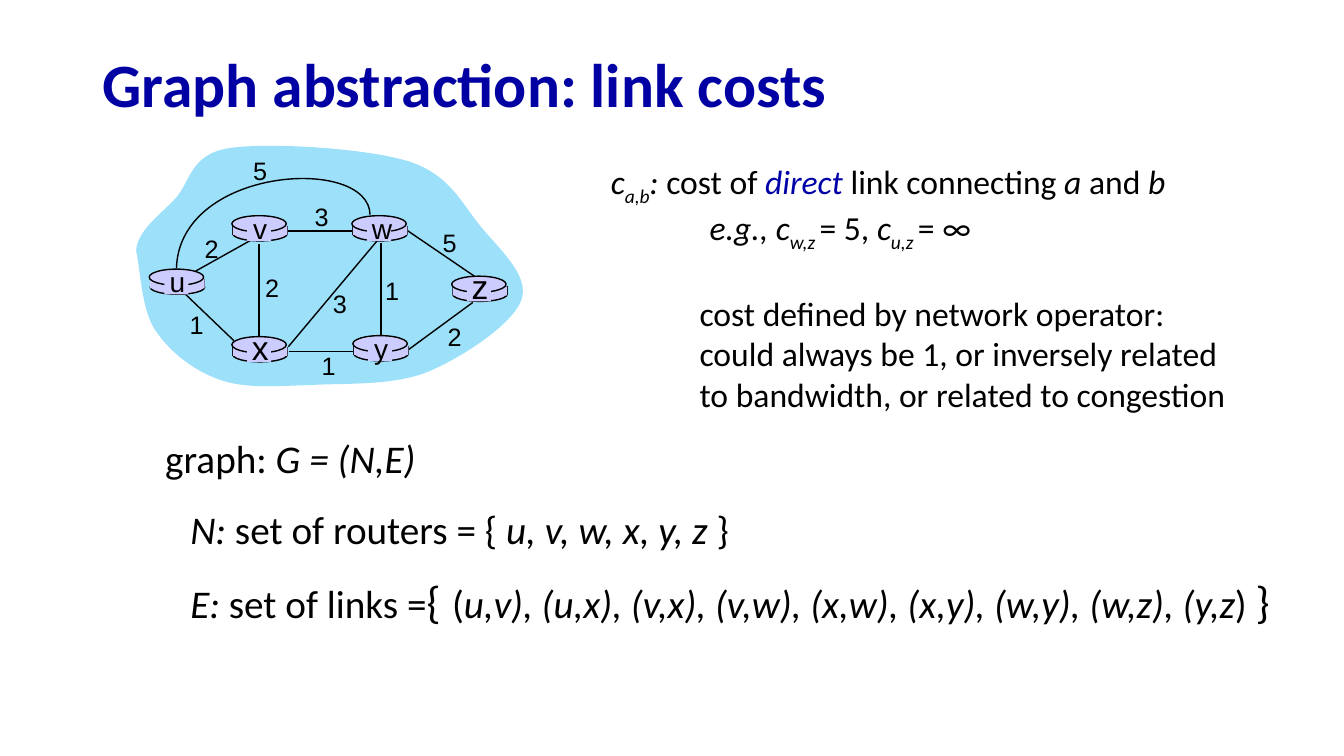
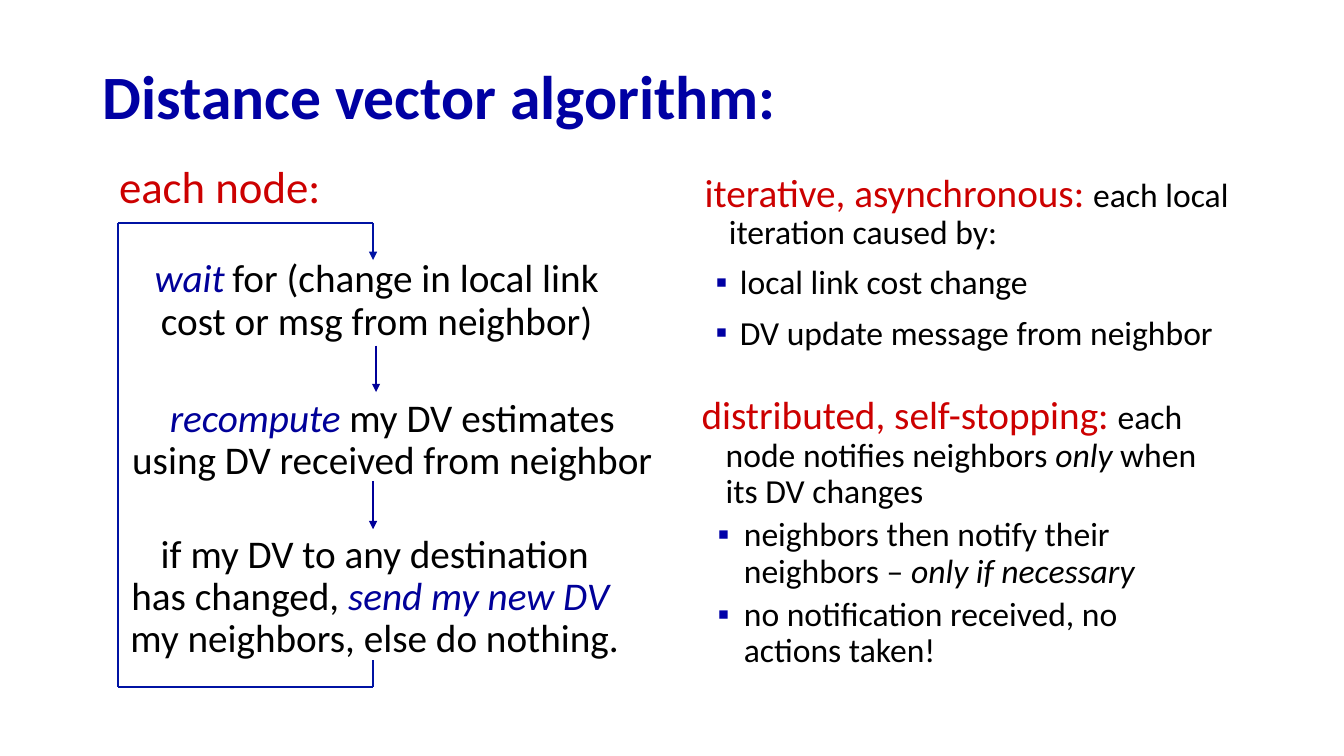
from lxml import etree
from pptx import Presentation
from pptx.dml.color import RGBColor
from pptx.enum.shapes import MSO_CONNECTOR, MSO_SHAPE
from pptx.enum.text import MSO_ANCHOR, PP_ALIGN
from pptx.oxml.ns import qn
from pptx.util import Inches, Pt

STRAIGHT = MSO_CONNECTOR.STRAIGHT
OVAL, RECT = MSO_SHAPE.OVAL, MSO_SHAPE.RECTANGLE
CENTER, MIDDLE = PP_ALIGN.CENTER, MSO_ANCHOR.MIDDLE

BLACK = RGBColor(0x00, 0x00, 0x00)
NAVY = RGBColor(0x00, 0x00, 0xA3)
BLUE = RGBColor(0x00, 0x00, 0x99)
ACCENT = RGBColor(0x00, 0x00, 0xA8)
FRAME = RGBColor(0x00, 0x13, 0xA3)
RED = RGBColor(0xCC, 0x00, 0x00)
SKY = RGBColor(0x9C, 0xE0, 0xFA)
LILAC = RGBColor(0xCC, 0xCC, 0xFF)

IT = {"italic": True}
SUB = {"italic": True, "sub": True}
KEY = {"italic": True, "color": BLUE}
HEAD = {"size": Pt(28), "color": RED}


class Deck:
    def __init__(self):
        self.prs = Presentation()
        self.prs.slide_width, self.prs.slide_height = Inches(13.33), Inches(7.5)
        self.s = None

    def slide(self, title, top, width):
        self.s = self.prs.slides.add_slide(self.prs.slide_layouts[6])
        self.text((0.92, top, width, 0.98), [([(title, {})], {"line_spacing": 0.9})],
                  size=44, anchor=MIDDLE, bold=True, color=NAVY)

    def text(self, box, paras, size=24, anchor=None, inset=0.05, **base):
        """Each paragraph is (runs, format); each run is (text, font format)."""
        tf = self.s.shapes.add_textbox(*map(Inches, box)).text_frame
        tf.word_wrap = True
        tf.margin_top = Inches(inset)
        if anchor is not None:
            tf.vertical_anchor = anchor
        for i, (runs, fmt) in enumerate(paras):
            p = tf.paragraphs[0] if i == 0 else tf.add_paragraph()
            self.format_paragraph(p, **fmt)
            for words, style in runs:
                r = p.add_run()
                r.text = words
                self.format_run(r, {"name": "Calibri", "size": Pt(size),
                                    "color": BLACK, **base, **style})

    def format_paragraph(self, p, left=0, hang=0, bullet=None, **fmt):
        for name, value in fmt.items():
            setattr(p, name, value)
        pPr = p._p.get_or_add_pPr()
        pPr.set("marL", str(Inches(left)))
        pPr.set("indent", str(-Inches(hang)))
        if bullet is not None:
            clr = etree.SubElement(pPr, qn("a:buClr"))
            etree.SubElement(clr, qn("a:srgbClr")).set("val", str(bullet))
            etree.SubElement(pPr, qn("a:buFont")).set("typeface", "Arial")
            etree.SubElement(pPr, qn("a:buChar")).set("char", "▪")

    def format_run(self, r, style):
        for name, value in style.items():
            if name == "color":
                r.font.color.rgb = value
            elif name == "sub":
                r._r.get_or_add_rPr().set("baseline", "-25000")
            else:
                setattr(r.font, name, value)

    def label(self, x, y, w, words, size, **base):
        height = round(0.1 + size / 60, 2)
        self.text((x, y, w, height), [([(words, {})], {"alignment": CENTER})], size, **base)

    def paint(self, sp, fill=None, line=None):
        sp.shadow.inherit = False
        if fill is None:
            sp.fill.background()
        else:
            sp.fill.solid()
            sp.fill.fore_color.rgb = fill
        if line is None:
            sp.line.fill.background()
        else:
            sp.line.color.rgb, sp.line.width = line, Pt(1)

    def shape(self, kind, x, y, w, h, fill, line=None):
        self.paint(self.s.shapes.add_shape(kind, *map(Inches, (x, y, w, h))), fill, line)

    def curve(self, points, close=False, **colours):
        """Draw cubic curves: a start, then two handles and an end for each."""
        pts = [(Inches(x), Inches(y)) for x, y in points]
        fb = self.s.shapes.build_freeform(*pts[0], scale=1.0)
        fb.add_line_segments(pts[1:], close=close)
        sp = fb.convert_to_shape()
        segments = list(sp._element.iter(qn("a:lnTo")))
        for i in range(0, len(points) - 1, 3):
            bez = etree.Element(qn("a:cubicBezTo"))
            segments[i].addprevious(bez)
            for segment in segments[i:i + 3]:
                bez.append(segment[0])
                segment.getparent().remove(segment)
        self.paint(sp, **colours)

    def line(self, x1, y1, x2, y2, color=BLACK, width=1, arrow=False):
        cx = self.s.shapes.add_connector(STRAIGHT, *map(Inches, (x1, y1, x2, y2)))
        cx.line.color.rgb, cx.line.width = color, Pt(width)
        if arrow:
            ln = cx.line._get_or_add_ln()
            etree.SubElement(ln, qn("a:tailEnd")).set("type", "triangle")
        etree.SubElement(cx._element.spPr, qn("a:effectLst"))

    def router(self, x, y, name, size):
        w = 0.54
        self.shape(OVAL, x + 0.01, y + 0.11, w, 0.14, LILAC, BLACK)
        for side in (x + 0.01, x + 0.01 + w):
            self.line(side, y + 0.1, side, y + 0.19)
        self.shape(RECT, x + 0.01, y + 0.1, w, 0.09, LILAC)
        self.shape(OVAL, x, y, w, 0.16, LILAC, BLACK)
        self.shape(RECT, x + 0.15, y + 0.02, 0.24, 0.23, LILAC)
        rise = 0.09 if size == 20 else 0.15
        self.label(x + 0.1, y - rise, 0.36, name, size, name="Arial")


CLOUD = [
    (1.35, 2.49), (1.36, 2.29), (1.58, 2.14), (1.74, 1.97), (1.89, 1.8), (1.89, 1.53),
    (2.27, 1.47), (2.66, 1.41), (3.63, 1.47), (4.05, 1.6), (4.46, 1.73), (4.58, 2.02),
    (4.77, 2.25), (4.96, 2.48), (5.26, 2.74), (5.17, 2.98), (5.08, 3.22), (4.58, 3.55),
    (4.24, 3.69), (3.89, 3.83), (3.42, 3.8), (3.08, 3.82), (2.73, 3.83), (2.42, 3.86),
    (2.16, 3.76), (1.91, 3.67), (1.67, 3.48), (1.53, 3.26), (1.4, 3.05), (1.39, 2.65),
    (1.35, 2.49)]
LINK_UW = [(3.67, 2.13), (3.66, 1.54), (1.78, 1.65), (1.75, 2.66)]
ROUTERS = [
    (1.48, 2.67, "u", 20), (2.3, 2.14, "v", 20), (3.49, 2.14, "w", 20),
    (2.3, 3.34, "x", 24), (3.5, 3.33, "y", 20), (4.48, 2.74, "z", 24)]
# ends of the link, its cost, left and top of the cost
LINKS = [
    ((1.94, 2.69, 2.53, 2.36), "2", 1.93, 2.27),
    ((1.84, 2.92, 2.32, 3.38), "1", 1.78, 3.02),
    ((2.57, 2.42, 2.57, 3.35), "2", 2.53, 2.65),
    ((2.86, 2.29, 3.5, 2.29), "3", 3.02, 1.95),
    ((2.86, 3.44, 3.74, 2.39), "3", 3.2, 2.81),
    ((2.87, 3.49, 3.51, 3.49), "1", 3.09, 3.43),
    ((3.78, 2.41, 3.78, 3.32), "1", 3.72, 2.68),
    ((4.03, 2.28, 4.72, 2.75), "5", 4.29, 2.21),
    ((4.05, 3.47, 4.69, 3), "2", 4.34, 3.14)]


def link_costs(deck):
    deck.slide("Graph abstraction: link costs", 0.38, 7.5)
    deck.curve(CLOUD, close=True, fill=SKY)
    for ends, *_ in LINKS:
        deck.line(*ends)
    for router in ROUTERS:
        deck.router(*router)
    deck.curve(LINK_UW, line=BLACK)
    for _, cost, x, y in LINKS:
        deck.label(x, y, 0.34, cost, 18, name="Arial")
    deck.label(2.41, 1.49, 0.34, "5", 18, name="Arial")

    deck.text((5.96, 1.55, 6.45, 2.52), [
        ([("c", IT), ("a,b", SUB), (": ", IT), ("cost of ", {}),
          ("direct", {**IT, "color": ACCENT}),
          (" link connecting ", {}), ("a", IT), (" and ", {}), ("b", IT)], {}),
        ([("e.g., c", IT), ("w,z ", SUB), ("= 5, ", {}), ("c", IT), ("u,z ", SUB),
          ("= ∞", {})], {"left": 0.98}),
        ([("cost defined by network operator: could always be 1, or inversely related "
           "to bandwidth, or related to congestion", {})],
         {"left": 0.88, "space_before": Pt(28.5)})])
    big = {"size": Pt(32)}
    definitions = [
        ((1.54, 4.26, 2.71, 1.04), [("graph: ", {}), ("G = (N,E)", IT)]),
        ((1.79, 4.96, 5.59, 0.57), [
            ("N: ", IT), ("set of routers = { ", {}),
            ("u, v, w, x, y, z ", IT), ("}", {})]),
        ((1.79, 5.59, 11.02, 0.71), [
            ("E: ", IT), ("set of links =", {}), ("{", big), (" ", {"size": Pt(36)}),
            ("(", {}),
            ("u,v), (u,x), (v,x), (v,w), (x,w), (x,y), (w,y), (w,z), (y,z", IT),
            (") ", {}), ("}", big)])]
    for box, runs in definitions:
        deck.text(box, [(runs, {})], 28)


def distance_vector(deck):
    deck.slide("Distance vector algorithm:", 0.5, 11.5)
    deck.label(1.07, 1.53, 2.22, "each node:", 32, color=RED)
    steps = [
        ((1.21, 2.12, 5.05, 2.56), 0.45, [
            ("wait", KEY), (" ", {"size": Pt(24)}),
            ("for (change in local link cost or msg from neighbor)", {})]),
        ((1.16, 3.57, 5.46, 1.56), 0.38, [
            ("recompute", KEY),
            (" my DV estimates using DV received from neighbor", {})]),
        ((1.19, 4.92, 5.05, 1.68), 0.38, [
            ("if my DV to any destination has changed, ", {}), ("send my new DV ", KEY),
            (" my neighbors, else do nothing. ", {})])]
    for box, inset, runs in steps:
        deck.text(box, [(runs, {"alignment": CENTER, "line_spacing": 0.9})], 28,
                  inset=inset)

    left, right, top, bottom = 1.17, 3.7, 2.21, 6.82
    for ends in [(right, bottom, right, 6.55), (left, bottom, right, bottom),
                 (left, top, right, top), (left, top, left, bottom)]:
        deck.line(*ends, FRAME, 1.5)
    for x, y1, y2, color in [(right, top, 2.58, FRAME), (3.73, 3.43, 3.89, BLUE),
                             (right, 4.77, 5.25, BLUE)]:
        deck.line(x, y1, x, y2, color, 1.5, arrow=True)

    intro = {"left": 0.39, "hang": 0.24, "line_spacing": 0.9}
    cause = {"left": 0.5, "hang": 0.24, "bullet": NAVY,
             "line_spacing": 0.9, "space_before": Pt(10)}
    effect = {"left": 0.57, "hang": 0.26, "bullet": ACCENT,
              "line_spacing": 0.9, "space_before": Pt(5)}
    deck.text((6.74, 1.67, 5.91, 2.16), [
        ([("iterative, asynchronous: ", HEAD), ("each local iteration caused by:", {})],
         intro),
        ([("local link cost change", {})], cause),
        ([("DV update message from neighbor", {})], cause)])
    deck.text((6.71, 3.88, 5.4, 3.19), [
        ([("distributed, self-stopping: ", HEAD), ("each node notifies neighbors ", {}),
          ("only", IT), (" when its DV changes", {})], intro),
        ([("neighbors then notify their neighbors – ", {}), ("only if necessary", IT)],
         effect),
        ([("no notification received, no actions taken!", {})], effect)])


def main():
    deck = Deck()
    link_costs(deck)
    distance_vector(deck)
    deck.prs.save("out.pptx")


if __name__ == "__main__":
    main()
